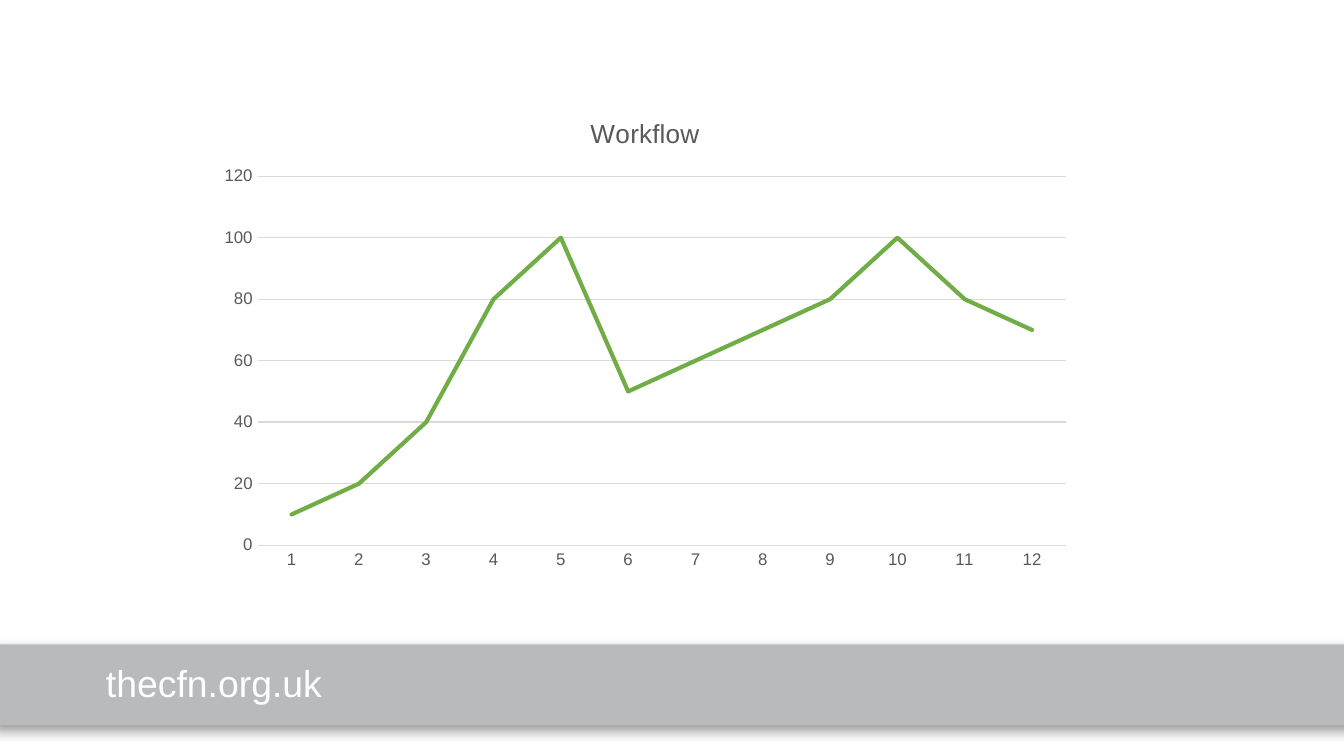
from lxml import etree
from pptx import Presentation
from pptx.chart.data import CategoryChartData
from pptx.dml.color import RGBColor
from pptx.enum.chart import XL_CHART_TYPE, XL_MARKER_STYLE, XL_TICK_MARK
from pptx.enum.shapes import MSO_SHAPE
from pptx.enum.text import MSO_ANCHOR
from pptx.oxml.ns import qn
from pptx.util import Emu, Pt

LINE_CHART = XL_CHART_TYPE.LINE
NO_MARKER = XL_MARKER_STYLE.NONE
NO_TICK = XL_TICK_MARK.NONE
RECTANGLE = MSO_SHAPE.RECTANGLE
TOP = MSO_ANCHOR.TOP

PX = 4572  # EMU, 200 px to the inch
FONT = "Arial"
WHITE, GREY_BAND, GREY_TEXT, GREY_GRID, GREEN, BLACK = (
    "FFFFFF", "B8BABC", "595959", "D9D9D9", "70AD47", "000000")
WORKFLOW = [10, 20, 40, 80, 100, 50, 60, 70, 80, 100, 80, 70]


def px(*lengths):
    return [Emu(length * PX) for length in lengths]


def color(hex_string):
    return RGBColor.from_string(hex_string)


def format_font(font, size, hex_string):
    values = {"name": FONT, "size": Pt(size), "bold": False}
    for attribute, value in values.items():
        setattr(font, attribute, value)
    font.color.rgb = color(hex_string)


def format_line(line, hex_string, width):
    line.color.rgb = color(hex_string)
    line.width = Pt(width)


def add_shadow(shape, hex_string, alpha, blur, distance, angle):
    shape.shadow.inherit = False
    effects = shape.element.spPr.find(qn("a:effectLst"))
    shadow = etree.SubElement(
        effects, qn("a:outerShdw"), blurRad=str(Pt(blur)),
        dist=str(Pt(distance)), dir=str(angle * 60000), rotWithShape="0")
    tint = etree.SubElement(shadow, qn("a:srgbClr"), val=hex_string)
    etree.SubElement(tint, qn("a:alpha"), val=str(alpha * 1000))


def add_footer(slide, left, top, width, height):
    # Grey band with a soft shadow below
    band = slide.shapes.add_shape(RECTANGLE, *px(left, top, width, height))
    band.fill.solid()
    band.fill.fore_color.rgb = color(GREY_BAND)
    band.line.fill.background()
    add_shadow(band, BLACK, alpha=40, blur=7, distance=3, angle=90)

    # Web address
    address = slide.shapes.add_textbox(*px(left + 150, top + 21, 632, 86))
    frame = address.text_frame
    frame.word_wrap = True
    frame.vertical_anchor = TOP
    paragraph = frame.paragraphs[0]
    paragraph.line_spacing = 0.9
    run = paragraph.add_run()
    run.text = "thecfn.org.uk"
    format_font(run.font, 20, WHITE)


def add_workflow_chart(slide, left, top, width, height):
    data = CategoryChartData()
    data.categories = [str(n) for n in range(1, len(WORKFLOW) + 1)]
    data.add_series("Series 1", WORKFLOW)
    chart = slide.shapes.add_chart(
        LINE_CHART, *px(left, top, width, height), data).chart
    format_font(chart.font, 10, BLACK)
    chart.has_legend = False

    # Title
    chart.has_title = True
    chart.chart_title.include_in_layout = False
    title = chart.chart_title.text_frame.paragraphs[0].add_run()
    title.text = "Workflow"
    format_font(title.font, 14, GREY_TEXT)

    # Axes and gridlines
    for axis in (chart.category_axis, chart.value_axis):
        axis.major_tick_mark = axis.minor_tick_mark = NO_TICK
        format_font(axis.tick_labels.font, 9, GREY_TEXT)
    format_line(chart.category_axis.format.line, GREY_GRID, 0.75)
    scale = chart.value_axis
    scale.minimum_scale, scale.maximum_scale, scale.major_unit = 0, 120, 20
    scale.format.line.fill.background()
    format_line(scale.major_gridlines.format.line, GREY_GRID, 0.75)

    # Workflow line
    plot = chart.plots[0]
    plot.vary_by_categories = False
    workflow = plot.series[0]
    workflow.smooth = False
    workflow.marker.style = NO_MARKER
    format_line(workflow.format.line, GREEN, 2.25)
    line_xml = workflow.format.line.fill._xPr
    line_xml.set("cap", "rnd")


def main():
    deck = Presentation()
    deck.slide_width, deck.slide_height = px(2000, 1125)
    slide = deck.slides.add_slide(deck.slide_layouts[6])
    slide.background.fill.solid()
    slide.background.fill.fore_color.rgb = color(WHITE)
    add_footer(slide, -12, 959, 2026, 120)
    add_workflow_chart(slide, 308, 141, 1304, 722)
    deck.save("out.pptx")


if __name__ == "__main__":
    main()
